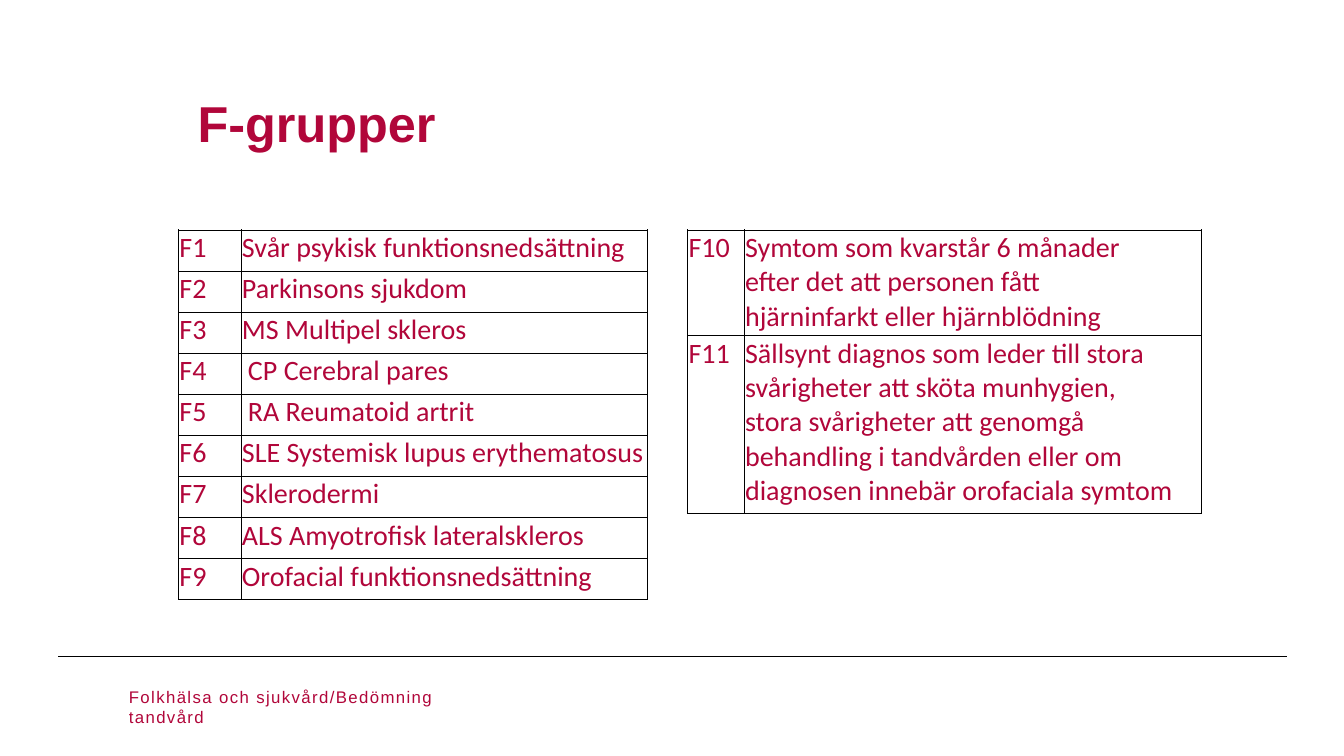
import pptx
import pptx.dml.color
import pptx.enum.shapes
import pptx.enum.text
import pptx.oxml
import pptx.oxml.ns
import pptx.util
from pptx.util import Inches

CRIMSON = "B1063A"
BLACK = "000000"
RULE_WIDTH = 0.5

GROUPS_LEFT = [
    ("F1", "Svår psykisk funktionsnedsättning"),
    ("F2", "Parkinsons sjukdom"),
    ("F3", "MS Multipel skleros"),
    ("F4", "CP Cerebral pares"),
    ("F5", "RA Reumatoid artrit"),
    ("F6", "SLE Systemisk lupus erythematosus"),
    ("F7", "Sklerodermi"),
    ("F8", "ALS Amyotrofisk lateralskleros"),
    ("F9", "Orofacial funktionsnedsättning"),
]
GROUPS_RIGHT = [
    ("F10", "Symtom som kvarstår 6 månader\n"
            "efter det att personen fått\n"
            "hjärninfarkt eller hjärnblödning"),
    ("F11", "Sällsynt diagnos som leder till stora\n"
            "svårigheter att sköta munhygien,\n"
            "stora svårigheter att genomgå\n"
            "behandling i tandvården eller om\n"
            "diagnosen innebär orofaciala symtom"),
]
INDENTED_GROUPS = {"F4", "F5"}


def color(hex_string):
    return pptx.dml.color.RGBColor.from_string(hex_string)


def format_paragraph(paragraph, font_name, size, bold=False):
    paragraph.alignment = pptx.enum.text.PP_ALIGN.LEFT
    font = paragraph.font
    font.name = font_name
    font.size = pptx.util.Pt(size)
    font.bold = bold
    font.color.rgb = color(CRIMSON)


def add_cell_borders(cell):
    properties = cell._tc.get_or_add_tcPr()
    width = pptx.util.Pt(RULE_WIDTH)
    for side in ("lnL", "lnR", "lnT", "lnB"):
        properties.append(pptx.oxml.parse_xml(
            f'<a:{side} {pptx.oxml.ns.nsdecls("a")} w="{width}"><a:solidFill>'
            f'<a:srgbClr val="{BLACK}"/></a:solidFill></a:{side}>'))


def fill_cell(cell, text, left_margin=0.01):
    cell.text = text
    cell.margin_left = Inches(left_margin)
    cell.margin_right = cell.margin_top = Inches(0.01)
    cell.margin_bottom = 0
    add_cell_borders(cell)
    cell.fill.background()
    for paragraph in cell.text_frame.paragraphs:
        format_paragraph(paragraph, "Calibri", 20)


def add_title(slide, left, top, width, height):
    title = slide.shapes.title
    title.left, title.top = Inches(left), Inches(top)
    title.width, title.height = Inches(width), Inches(height)
    frame = title.text_frame
    frame.text = "F-grupper"
    frame.vertical_anchor = pptx.enum.text.MSO_ANCHOR.TOP
    format_paragraph(frame.paragraphs[0], "Arial", 36, bold=True)


def add_group_table(slide, groups, left, top, code_width, name_width, row_heights):
    shape = slide.shapes.add_table(
        len(groups), 2, Inches(left), Inches(top),
        Inches(code_width + name_width), Inches(sum(row_heights)))
    table = shape.table
    table.first_row = table.horz_banding = False
    table.columns[0].width = Inches(code_width)
    table.columns[1].width = Inches(name_width)
    for row, ((code, name), height) in enumerate(zip(groups, row_heights)):
        table.rows[row].height = Inches(height)
        fill_cell(table.cell(row, 0), code)
        fill_cell(table.cell(row, 1), name, 0.07 if code in INDENTED_GROUPS else 0.01)


def add_footer(slide, left, top, width, height):
    # Rule above the footer
    rule_top = Inches(top - 0.3)
    rule = slide.shapes.add_connector(
        pptx.enum.shapes.MSO_CONNECTOR.STRAIGHT,
        Inches(0.58), rule_top, Inches(12.76), rule_top)
    rule.line.color.rgb = color(BLACK)
    rule.line.width = pptx.util.Pt(RULE_WIDTH)
    rule._element.spPr.append(pptx.oxml.parse_xml(
        f'<a:effectLst {pptx.oxml.ns.nsdecls("a")}/>'))

    # Department name with wide letter spacing
    box = slide.shapes.add_textbox(
        Inches(left), Inches(top), Inches(width), Inches(height))
    frame = box.text_frame
    frame.word_wrap = True
    frame.vertical_anchor = pptx.enum.text.MSO_ANCHOR.MIDDLE
    paragraph = frame.paragraphs[0]
    run = paragraph.add_run()
    run.text = "Folkhälsa och sjukvård/Bedömning tandvård"
    format_paragraph(paragraph, "Arial", 12)
    run._r.get_or_add_rPr().set("spc", "100")


def build_groups_slide(presentation):
    slide = presentation.slides.add_slide(presentation.slide_layouts[5])
    add_title(slide, 1.86, 0.86, 9.62, 1.34)
    # Two tables of groups, side by side
    table_top = 2.28
    row_count = len(GROUPS_LEFT)
    add_group_table(slide, GROUPS_LEFT, 1.77, table_top, 0.62, 4.03,
                    [3.67 / row_count] * row_count)
    add_group_table(slide, GROUPS_RIGHT, 6.82, table_top, 0.56, 4.54, [1.05, 1.76])
    add_footer(slide, 1.18, 6.81, 3.94, 0.4)


def main():
    presentation = pptx.Presentation()
    presentation.slide_width = Inches(13.33)
    presentation.slide_height = Inches(7.5)
    build_groups_slide(presentation)
    presentation.save("out.pptx")


if __name__ == "__main__":
    main()
